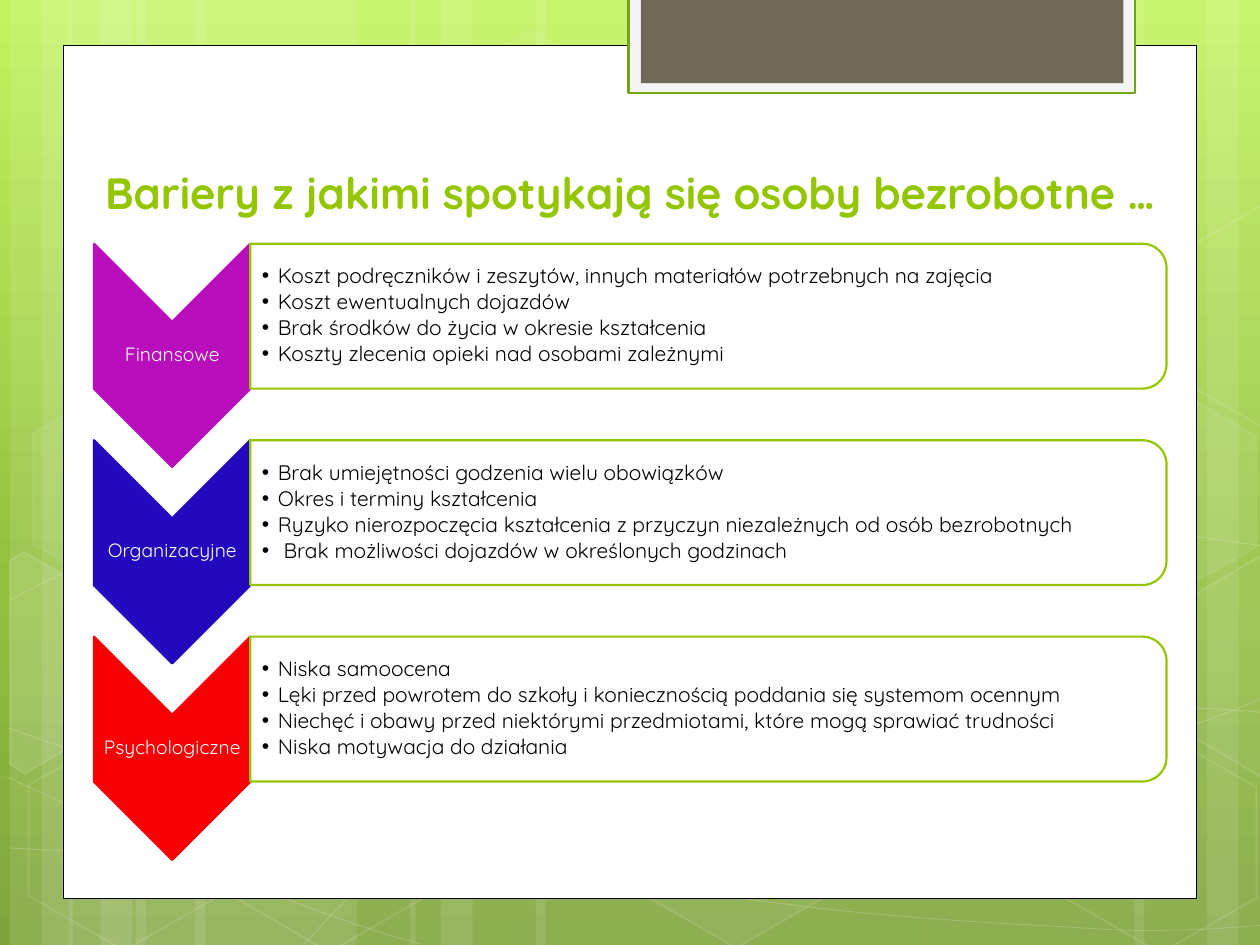
from copy import deepcopy
from lxml import etree
from pptx import Presentation
from pptx import util as u
from pptx.dml.color import RGBColor
from pptx.enum import shapes, text
from pptx.oxml import ns

KIND = shapes.MSO_SHAPE
MID, BOTTOM = text.MSO_ANCHOR.MIDDLE, text.MSO_ANCHOR.BOTTOM
FONT = "Quicksand"
HUES = {"white": "FFFFFF", "black": "000000", "green": "94C600", "rim": "74A510",
        "frame": "F5F5F5", "tab": "71685A", "money": "B80EBC",
        "order": "2309BD", "mind": "F60006"}
SKY = [(0, "C3F35F"), (0.62, "93BF3F"), (1, "81A53E")]

# Left and width of the pale stripes, in cm
LEFT = [(2.74, 4.45), (0.2, 1.27), (0.84, 2.11)]
STRIPES = LEFT + [(x + 1.19, w) for x, w in LEFT] + [
    (18.62, 4.45), (24.33, 1.27), (22.86, 2.11),
    (10.8, 7.82), (8.26, 1.27), (8.89, 2.11)]

# Bezier curves in inches: a start, then three points for each part
CURVES = [
    [(.07, 6.73), (.61, 6.76), (1.15, 6.79), (1.9, 6.78), (2.65, 6.77), (3.58, 6.75),
     (4.58, 6.65), (5.58, 6.55), (7, 6.36), (7.92, 6.17), (8.83, 5.98), (9.77, 5.68),
     (10.07, 5.51)],
    [(.07, 4.77), (.36, 4.61), (.65, 4.46), (1.21, 4.31), (1.78, 4.16), (2.59, 3.94),
     (3.47, 3.87), (4.36, 3.8), (5.44, 3.79), (6.54, 3.87), (7.64, 3.95), (9.47, 4.26),
     (10.07, 4.34)],
    [(.06, 6.17), (1.27, 6.72), (2.47, 7.27), (3.34, 7.49)],
    [(.07, 5.78), (.38, 5.89), (.7, 6), (1.28, 6.16), (1.86, 6.31), (2.73, 6.56),
     (3.57, 6.73), (4.4, 6.9), (5.45, 7.08), (6.28, 7.18), (7.11, 7.29), (8, 7.33),
     (8.53, 7.36), (9.05, 7.4), (9.19, 7.38), (9.45, 7.38), (9.71, 7.37), (9.89, 7.35),
     (10.07, 7.34)],
    [(2.42, 7.49), (2.6, 7.29), (2.78, 7.09), (3.02, 6.91), (3.26, 6.73), (3.6, 6.53),
     (3.88, 6.39), (4.16, 6.25), (4.33, 6.19), (4.7, 6.09), (5.06, 5.99), (5.73, 5.85),
     (6.08, 5.78), (6.44, 5.71), (6.49, 5.71), (6.8, 5.69), (7.11, 5.66), (7.6, 5.63),
     (7.94, 5.62), (8.29, 5.61), (8.86, 5.62), (8.86, 5.62), (9.08, 5.62), (9.31, 5.62),
     (9.53, 5.62), (9.71, 5.63), (9.88, 5.64), (9.97, 5.65), (10.06, 5.66),
     (10.03, 5.65), (10.06, 5.66)]]

# Left and top in cm, fill and line opacity in percent
CELLS = [(8.48, .91, 4, 8), (12.62, 14.96, 6, 12), (.28, 15.01, 0, 12),
         (.36, 7.92, 7, 8), (4.42, 15.04, 0, 12), (19.13, 11.51, 10, 12),
         (21.18, 15.06, 0, 12), (21.18, 7.98, 7, 8)]

# Hexagons cut by the slide edge, in inches, with fill opacity
CUTS = [
    ([(.08, 4.45), (.19, 4.38), (.96, 4.82), (.95, 5.7), (.2, 6.14), (.08, 6.07)], 10),
    ([(9.26, 4.85), (10.01, 4.41), (10.09, 4.46), (10.09, 6.13), (10.02, 6.17),
      (9.26, 5.73)], 4),
    ([(9.26, 2.07), (10.01, 1.63), (10.1, 1.68), (10.09, 3.35), (10.02, 3.39),
      (9.26, 2.95)], 0)]

ROWS = [
    ("Finansowe", "money", [
        "Koszt podręczników i zeszytów, innych materiałów potrzebnych na zajęcia",
        "Koszt ewentualnych dojazdów",
        "Brak środków do życia w okresie kształcenia",
        "Koszty zlecenia opieki nad osobami zależnymi"]),
    ("Organizacyjne", "order", [
        "Brak umiejętności godzenia wielu obowiązków",
        "Okres i terminy kształcenia",
        "Ryzyko nierozpoczęcia kształcenia z przyczyn niezależnych od osób bezrobotnych",
        " Brak możliwości dojazdów w określonych godzinach"]),
    ("Psychologiczne", "mind", [
        "Niska samoocena",
        "Lęki przed powrotem do szkoły i koniecznością poddania się systemom ocennym",
        "Niechęć i obawy przed niektórymi przedmiotami, które mogą sprawiać trudności",
        "Niska motywacja do działania"])]
STEP = 3.96


def assign(item, vals):
    for key, val in vals.items():
        setattr(item, key, val)


def box(*sizes):
    return dict(zip(("left", "top", "width", "height"), map(u.Cm, sizes)))


def tint(fill, hue, alpha):
    """Solid colour, or none when the opacity is zero."""
    if not alpha:
        fill.background()
        return
    fill.solid()
    fill.fore_color.rgb = RGBColor.from_string(HUES[hue])


def paint(shape, hue, alpha=100, rim=None, width=1.25, clear=100):
    shape.shadow.inherit = False
    tint(shape.fill, hue, alpha)
    tint(shape.line.fill, rim, clear if rim else 0)
    if rim:
        shape.line.width = u.Pt(width)
    for route, part in (("p:spPr/a:solidFill/a:srgbClr", alpha),
                        ("p:spPr/a:ln/a:solidFill/a:srgbClr", clear)):
        for node in shape.element.xpath(route):
            if part < 100:
                etree.SubElement(node, ns.qn("a:alpha"), val=str(part * 1000))


def block(slide, kind, sizes, hue, turn=0, **look):
    shape = slide.shapes.add_shape(kind, *map(u.Cm, sizes))
    shape.rotation = turn
    paint(shape, hue, **look)
    return shape


def trace(slide, dots, close, alpha, **look):
    spots = [(u.Cm(2.54 * x), u.Cm(2.54 * y)) for x, y in dots]
    form = slide.shapes.build_freeform(*spots[0], scale=1.0)
    form.add_line_segments(spots[1:], close=close)
    shape = form.convert_to_shape()
    paint(shape, "white", alpha, rim="white", **look)
    return shape


def bend(shape):
    """Join each three line segments into one Bezier part."""
    lines = shape.element.xpath(".//a:path/a:lnTo")
    for i in range(0, len(lines), 3):
        curve = etree.Element(ns.qn("a:cubicBezTo"))
        lines[i].addprevious(curve)
        for line in lines[i:i + 3]:
            curve.append(line[0])
            line.getparent().remove(line)


def write(shape, lines, hue, size, frame, para, bold=False):
    body = shape.text_frame
    body.text = "\n".join(lines)
    assign(body, {"word_wrap": True, "auto_size": text.MSO_AUTO_SIZE.NONE, **frame})
    for item in body.paragraphs:
        assign(item, {"space_before": u.Pt(0), **para})
        assign(item.font, {"name": FONT, "size": u.Pt(size), "bold": bold})
        item.font.color.rgb = RGBColor.from_string(HUES[hue])


def bullet(shape):
    for item in shape.text_frame.paragraphs:
        props = item._p.get_or_add_pPr()
        props.attrib.update({"marL": str(u.Cm(0.32)), "indent": str(u.Cm(-0.32))})
        etree.SubElement(props, ns.qn("a:buFont"), typeface="Arial")
        etree.SubElement(props, ns.qn("a:buChar"), char="•")


def scene(slide):
    # Gradient sky
    fill = slide.background.fill
    fill.gradient()
    fill.gradient_angle = 270
    stops = slide.element.find(".//" + ns.qn("a:gsLst"))
    stops.append(deepcopy(stops[0]))
    for stop, (place, hue) in zip(fill.gradient_stops, SKY):
        stop.position = place
        stop.color.rgb = RGBColor.from_string(hue)
    # Stripes, curves and hexagons
    for x, wide in STRIPES:
        block(slide, KIND.RECTANGLE, (x, 0, wide, 19.05), "white", alpha=10)
    for dots in CURVES:
        bend(trace(slide, dots, False, 0, width=0.5, clear=20))
    for x, y, alpha, clear in CELLS:
        cell = block(slide, KIND.HEXAGON, (x, y, 4.45, 3.86), "white", 30,
                     alpha=alpha, rim="white", width=1, clear=clear)
        cell.adjustments[0] = 0.29
    for dots, alpha in CUTS:
        trace(slide, dots, True, alpha, width=1, clear=12)
    # Page and top tab
    block(slide, KIND.RECTANGLE, (1.27, .91, 22.86, 17.2), "white", rim="black", width=0.5)
    block(slide, KIND.RECTANGLE, (12.67, -.05, 10.21, 1.93), "frame", rim="rim")
    block(slide, KIND.RECTANGLE, (12.92, -.05, 9.73, 1.73), "tab")


def place(slide, holder, sizes):
    assign(holder, box(*sizes))
    slide.shapes.element.append(holder.element)


def row(slide, holder, drop, name, hue, lines):
    slim = dict.fromkeys(("margin_left", "margin_top", "margin_right", "margin_bottom"),
                         u.Cm(0.03))
    slim["vertical_anchor"] = MID
    block(slide, KIND.CHEVRON, (1.22, 5.59 + drop, 4.5, 3.15), hue, 90, rim=hue)
    label = slide.shapes.add_textbox(*box(1.9, 6.48 + drop, 3.15, 1.35).values())
    write(label, [name], "white", 11, slim,
          {"alignment": text.PP_ALIGN.CENTER, "line_spacing": 0.9})
    block(slide, KIND.ROUND_2_SAME_RECTANGLE, (12.82, -2.86 + drop, 2.92, 18.47),
          "white", 90, alpha=90, rim="green")
    place(slide, holder, (5.05, 5.05 + drop, 18.31, 2.64))
    write(holder, lines, "black", 12, {**slim, "margin_left": u.Cm(0.23)},
          {"alignment": text.PP_ALIGN.LEFT, "line_spacing": 0.9, "space_after": u.Pt(1.9)})
    bullet(holder)


def main():
    deck = Presentation()
    assign(deck, {"slide_width": u.Cm(25.4), "slide_height": u.Cm(19.05)})
    slide = deck.slides.add_slide(deck.slide_layouts[4])
    title, *lists, spare = slide.placeholders
    spare.element.getparent().remove(spare.element)
    scene(slide)
    place(slide, title, (1.5, 2.84, 22.4, 1.68))
    write(title, ["Bariery z jakimi spotykają się osoby bezrobotne …"], "green", 25,
          {"vertical_anchor": BOTTOM}, {"alignment": text.PP_ALIGN.CENTER}, bold=True)
    for i, (holder, part) in enumerate(zip(lists, ROWS)):
        row(slide, holder, i * STEP, *part)
    deck.save("out.pptx")


if __name__ == "__main__":
    main()
